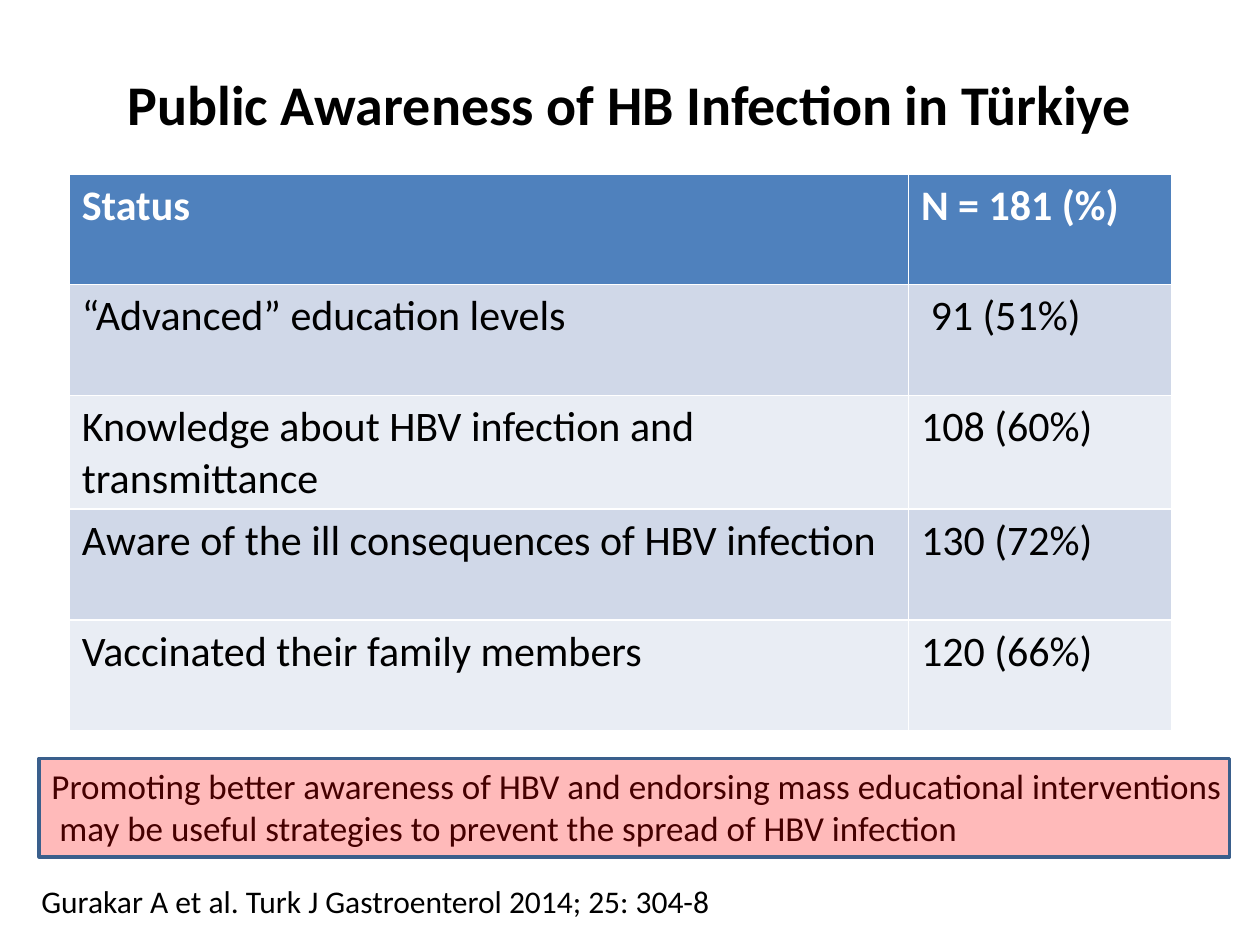
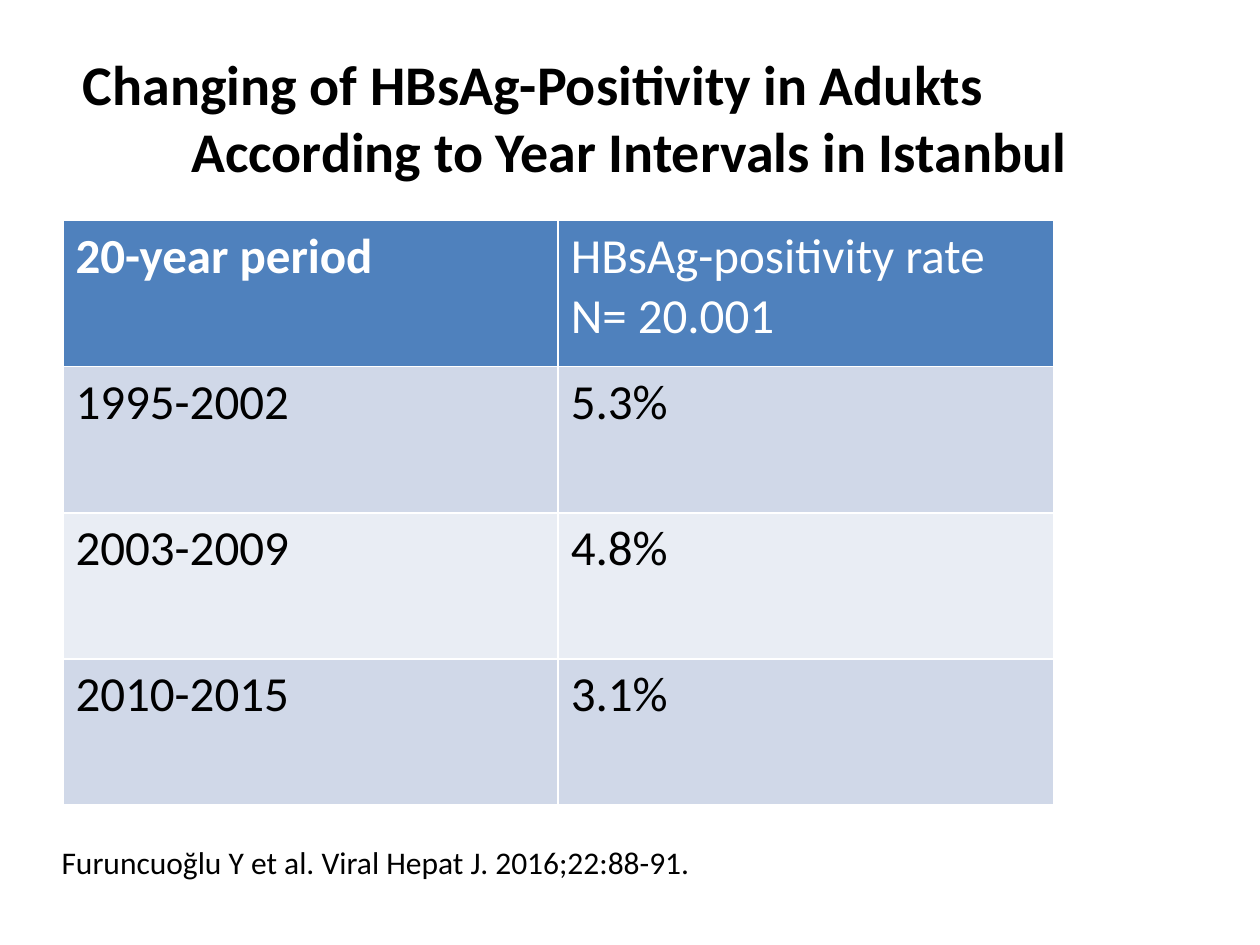
from lxml import etree
from pptx import Presentation
from pptx.dml.color import RGBColor
from pptx.enum import shapes, text
from pptx.oxml import ns
from pptx.util import Inches, Pt

FONT = "Calibri"
BLACK, WHITE = "000000", "FFFFFF"
HEADER = "4F81BD"
BANDS = ("D0D8E8", "E9EDF4")
ALERT, ALERT_LINE = "FF0000", "3A5F8C"


def rgb(value):
    """Turn a hex string into a colour."""
    return RGBColor.from_string(value)


def add_run(p, content, size, color=BLACK, bold=False):
    """Append one styled run to a paragraph."""
    r = p.add_run()
    r.text = content
    r.font.name = FONT
    r.font.size = Pt(size)
    r.font.bold = bold
    r.font.color.rgb = rgb(color)


def write_lines(tf, lines, size, color=BLACK, bold=False):
    """Fill a text frame with one paragraph per line."""
    for i, line in enumerate(lines):
        p = tf.add_paragraph() if i else tf.paragraphs[0]
        add_run(p, line, size, color, bold)


def add_title(s, content, height):
    """Add the bold slide title, centred, and return its paragraph."""
    tf = s.shapes.add_textbox(Inches(0.5), Inches(0.3), Inches(9), Inches(height)).text_frame
    tf.word_wrap = True
    tf.vertical_anchor = text.MSO_ANCHOR.MIDDLE
    p = tf.paragraphs[0]
    p.alignment = text.PP_ALIGN.CENTER
    add_run(p, content, 32, bold=True)
    return p


def stagger(p, first, rest):
    """Left-align a paragraph with its first line and later lines at two offsets."""
    p.alignment = text.PP_ALIGN.LEFT
    pPr = p._p.get_or_add_pPr()
    pPr.set("marL", str(Inches(rest)))
    pPr.set("indent", str(Inches(first - rest)))


def add_note(s, lines, left, top, width, height, size):
    """Add an unwrapped text box that grows with its lines."""
    tf = s.shapes.add_textbox(Inches(left), Inches(top), Inches(width), Inches(height)).text_frame
    tf.word_wrap = False
    tf.auto_size = text.MSO_AUTO_SIZE.SHAPE_TO_FIT_TEXT
    write_lines(tf, lines, size)


def add_data_table(s, rows, left, top, widths, row_height, size, bold_heads):
    """Add a table with a blue header row and alternating bands."""
    tbl = s.shapes.add_table(len(rows), len(widths), Inches(left), Inches(top),
                             Inches(sum(widths)), Inches(row_height * len(rows))).table
    for col, width in zip(tbl.columns, widths):
        col.width = Inches(width)
    for i, row in enumerate(rows):
        tbl.rows[i].height = Inches(row_height)
        for j, content in enumerate(row):
            cell = tbl.cell(i, j)
            cell.fill.solid()
            cell.fill.fore_color.rgb = rgb(BANDS[(i - 1) % 2] if i else HEADER)
            write_lines(cell.text_frame, content.split("\n"), size,
                        BLACK if i else WHITE, i == 0 and bold_heads[j])


def add_overlay(s, left, top, width, height, opacity):
    """Add a see-through red rectangle with a blue outline."""
    sp = s.shapes.add_shape(shapes.MSO_SHAPE.RECTANGLE, Inches(left), Inches(top),
                            Inches(width), Inches(height))
    sp.shadow.inherit = False
    sp.fill.solid()
    sp.fill.fore_color.rgb = rgb(ALERT)
    sp.line.color.rgb = rgb(ALERT_LINE)
    sp.line.width = Pt(2)
    clr = sp._element.spPr.find(ns.qn("a:solidFill")).find(ns.qn("a:srgbClr"))
    etree.SubElement(clr, ns.qn("a:alpha")).set("val", str(opacity * 1000))


def build_awareness(s):
    """Build the public awareness slide."""
    add_title(s, "Public Awareness of HB Infection in Türkiye", 1.03)
    rows = [
        ("Status", "N = 181 (%)"),
        ("“Advanced” education levels", " 91 (51%)"),
        ("Knowledge about HBV infection and transmittance", "108 (60%)"),
        ("Aware of the ill consequences of HBV infection", "130 (72%)"),
        ("Vaccinated their family members", "120 (66%)"),
    ]
    add_data_table(s, rows, 0.55, 1.38, (6.66, 2.09), 0.88, 24, (True, True))
    message = [
        "Promoting better awareness of HBV and endorsing mass educational interventions",
        " may be useful strategies to prevent the spread of HBV infection",
    ]
    add_note(s, message, 0.31, 6.02, 9.59, 0.77, 20)
    add_overlay(s, 0.31, 6.02, 9.45, 0.78, 27)
    add_note(s, ["Gurakar A et al. Turk J Gastroenterol 2014; 25: 304-8"],
             0.23, 6.95, 5.57, 0.4, 18)


def build_positivity(s):
    """Build the slide on HBsAg-positivity by period."""
    title = add_title(s, "Changing of HBsAg-Positivity in Adukts "
                         "According to Year Intervals in Istanbul", 1.25)
    stagger(title, 0.06, 0.92)
    rows = [
        ("20-year period", "HBsAg-positivity rate\nN= 20.001"),
        ("1995-2002", "5.3%"),
        ("2003-2009", "4.8%"),
        ("2010-2015", "3.1%"),
    ]
    add_data_table(s, rows, 0.5, 1.75, (3.93, 3.93), 1.16, 28, (True, False))
    add_note(s, ["Furuncuoğlu Y et al. Viral Hepat J. 2016;22:88-91."],
             0.39, 6.64, 5.25, 0.4, 18)


def main():
    """Build and save the presentation."""
    prs = Presentation()
    prs.slide_width, prs.slide_height = Inches(10), Inches(7.5)
    for build in (build_awareness, build_positivity):
        build(prs.slides.add_slide(prs.slide_layouts[6]))
    prs.save("out.pptx")


if __name__ == "__main__":
    main()
